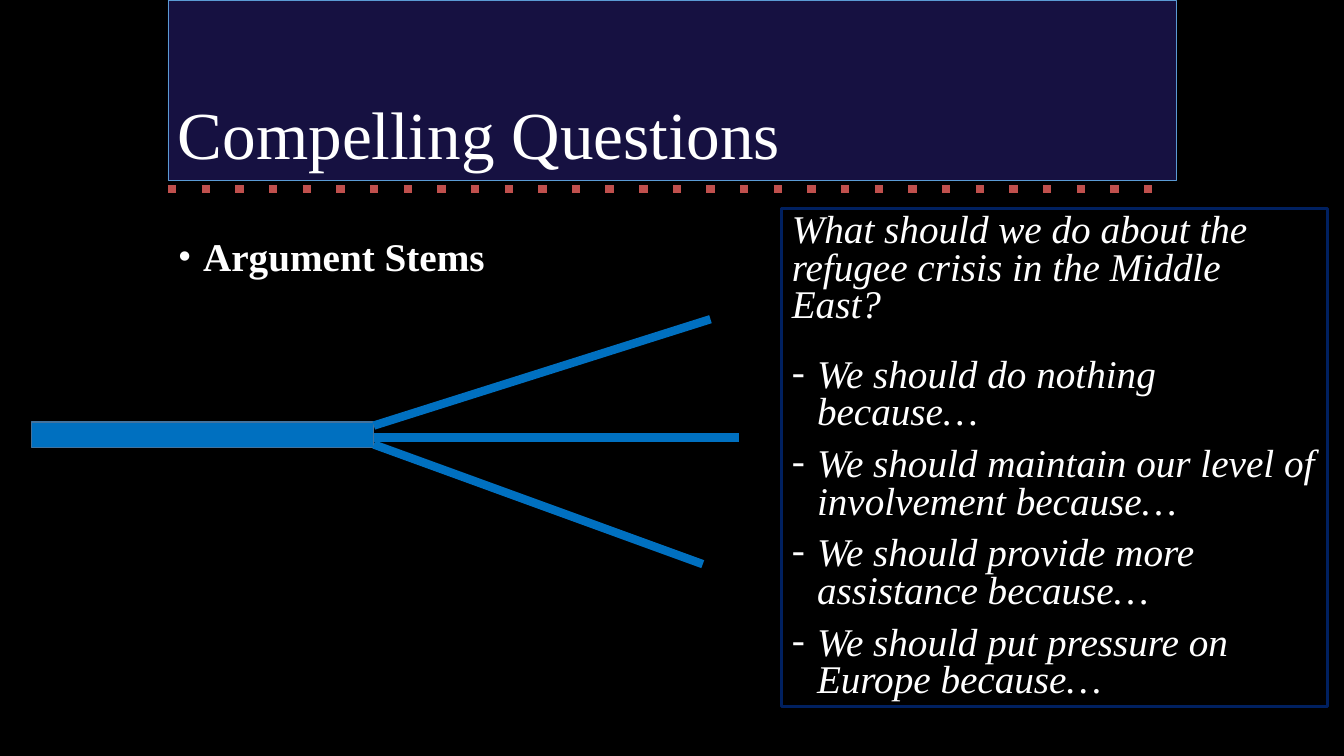
from lxml.etree import SubElement
from pptx import Presentation
from pptx.dml.color import RGBColor
from pptx.enum.shapes import MSO_CONNECTOR as Connector, MSO_SHAPE as Shape
from pptx.enum.text import MSO_ANCHOR as Anchor, PP_ALIGN as Align
from pptx.oxml.ns import qn
from pptx.util import Pt


def color(hex_code):
    return RGBColor.from_string(hex_code)


class SlideBuilder:
    font = "Times New Roman"
    text_color = "FFFFFF"
    stem_color = "0070C0"
    indent = 18

    def __init__(self, slide, background):
        self.slide = slide
        slide.background.fill.solid()
        slide.background.fill.fore_color.rgb = color(background)

    def box(self, left, top, width, height, line, line_width, fill=None):
        shape = self.slide.shapes.add_shape(
            Shape.RECTANGLE, Pt(left), Pt(top), Pt(width), Pt(height))
        shape.shadow.inherit = False
        if fill:
            shape.fill.solid()
            shape.fill.fore_color.rgb = color(fill)
        else:
            shape.fill.background()
        shape.line.color.rgb = color(line)
        shape.line.width = Pt(line_width)
        return shape

    def line(self, start, end, line_color, dash=None):
        connector = self.slide.shapes.add_connector(
            Connector.STRAIGHT, *(Pt(value) for value in start + end))
        connector.line.color.rgb = color(line_color)
        connector.line.width = Pt(6)
        if dash:
            SubElement(connector.line._get_or_add_ln(), qn("a:prstDash"), val=dash)
        SubElement(connector._element.spPr, qn("a:effectLst"))

    def text_box(self, left, top, width, height):
        return self.slide.shapes.add_textbox(Pt(left), Pt(top), Pt(width), Pt(height))

    def add_text(self, shape, entries, spacing, **font_format):
        """Each entry holds its text, its bullet or None, and the space before it."""
        frame = shape.text_frame
        frame.word_wrap = True
        frame.vertical_anchor = Anchor.TOP
        for number, (text, bullet, before) in enumerate(entries):
            paragraph = frame.add_paragraph() if number else frame.paragraphs[0]
            layout = {"alignment": Align.LEFT, "line_spacing": spacing,
                      "space_before": Pt(before)}
            for name, value in layout.items():
                setattr(paragraph, name, value)
            run = paragraph.add_run()
            run.text = text
            for name, value in {"name": self.font, **font_format}.items():
                setattr(run.font, name, value)
            run.font.color.rgb = color(self.text_color)
            if bullet:
                self.add_bullet(paragraph, bullet)

    def add_bullet(self, paragraph, bullet):
        properties = paragraph._p.get_or_add_pPr()
        properties.set("marL", str(Pt(self.indent)))
        properties.set("indent", str(-Pt(self.indent)))
        SubElement(properties, qn("a:buFont"), typeface=self.font)
        SubElement(properties, qn("a:buChar"), char=bullet)


def main():
    deck = Presentation()
    deck.slide_width, deck.slide_height = Pt(960), Pt(540)
    builder = SlideBuilder(deck.slides.add_slide(deck.slide_layouts[6]), "000000")

    # Title band with its dotted rule
    builder.box(120, 0, 720, 129, "5B9BD5", 0.5, "161141")
    title = builder.text_box(120, 69, 828, 104.5)
    builder.add_text(title, [("Compelling Questions", None, 0)], 0.9, size=Pt(48))
    builder.line((120, 135), (840, 135), "C0504D", "dot")

    # Heading
    heading = builder.text_box(120, 166.5, 408, 55.5)
    builder.add_text(heading, [("Argument Stems", "•", 10)], 0.9, size=Pt(28), bold=True)

    # Question and its argument stems
    question = builder.box(558.5, 149, 389.5, 355.5, "002060", 2)
    stems = ["do nothing", "maintain our level of involvement",
             "provide more assistance", "put pressure on Europe"]
    entries = [("What should we do about the refugee crisis in the Middle East?", None, 10)]
    entries += [(f"We should {stem} because…", "-", 10 if number else 22.5)
                for number, stem in enumerate(stems)]
    builder.add_text(question, entries, 0.8, size=Pt(28), italic=True)

    # Trunk that splits into three branches
    trunk_right = 267
    builder.box(22.5, 301.5, trunk_right - 22.5, 18, "43739E", 1, builder.stem_color)
    branches = [(304, (507.5, 228)), (312.5, (528, 312.5)), (317.5, (502, 403))]
    for start_y, tip in branches:
        builder.line((trunk_right, start_y), tip, builder.stem_color)

    deck.save("out.pptx")


if __name__ == "__main__":
    main()
